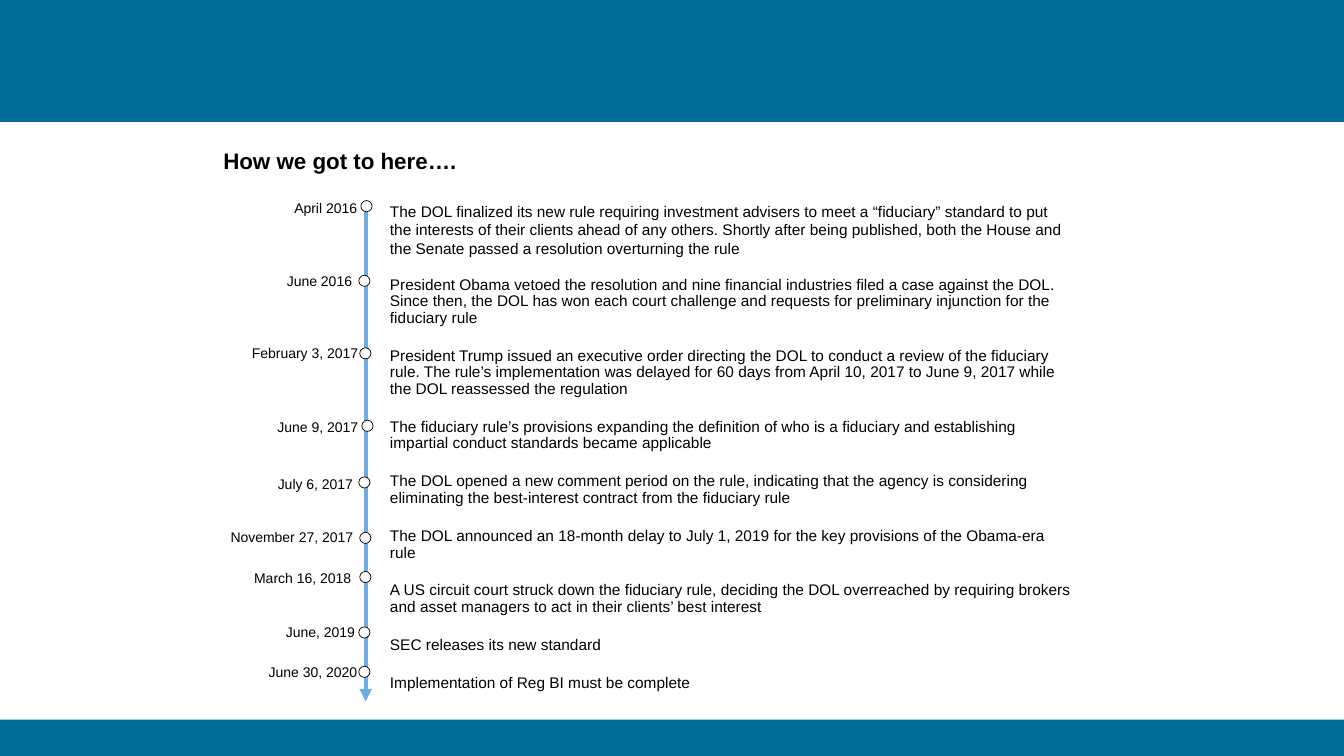
"""Build the fiduciary rule timeline slide."""
from dataclasses import dataclass

from lxml.etree import SubElement
from pptx import Presentation
from pptx.dml.color import RGBColor
from pptx.enum.shapes import MSO_CONNECTOR, MSO_SHAPE
from pptx.enum.text import PP_ALIGN
from pptx.oxml.ns import qn
from pptx.util import Pt

TITLE = "How we got to here…."

# date, label right, label top, dot left, dot top
MILESTONES = [
    ("April 2016", 262.1, 139, 257.8, 143.3),
    ("June 2016", 258.5, 190.8, 256.3, 196.6),
    ("February 3, 2017", 262.8, 242.6, 257, 248.4),
    ("June 9, 2017", 262.8, 295.2, 258.5, 300.2),
    ("July 6, 2017", 259.2, 336.2, 256.3, 340.6),
    ("November 27, 2017", 259.2, 373.7, 257, 380.2),
    ("March 16, 2018", 257.8, 403.2, 257, 408.2),
    ("June, 2019", 260.6, 442.1, 256.3, 447.8),
    ("June 30, 2020", 262.1, 470.2, 256.3, 475.9),
]

EVENTS = [
    "The DOL finalized its new rule requiring investment advisers to meet a “fiduciary” standard "
    "to put the interests of their clients ahead of any others. Shortly after being published, "
    "both the House and the Senate passed a resolution overturning the rule",
    "President Obama vetoed the resolution and nine financial industries filed a case against the "
    "DOL. Since then, the DOL has won each court challenge and requests for preliminary "
    "injunction for the fiduciary rule",
    "President Trump issued an executive order directing the DOL to conduct a review of the "
    "fiduciary rule. The rule’s implementation was delayed for 60 days from April 10, 2017 to "
    "June 9, 2017 while the DOL reassessed the regulation",
    "The fiduciary rule’s provisions expanding the definition of who is a fiduciary and "
    "establishing impartial conduct standards became applicable",
    "The DOL opened a new comment period on the rule, indicating that the agency is considering "
    "eliminating the best-interest contract from the fiduciary rule",
    "The DOL announced an 18-month delay to July 1, 2019 for the key provisions of the "
    "Obama-era rule",
    "A US circuit court struck down the fiduciary rule, deciding the DOL overreached by requiring "
    "brokers and asset managers to act in their clients’ best interest",
    "SEC releases its new standard",
    "Implementation of Reg BI must be complete",
]


@dataclass(frozen=True)
class Theme:
    """Colours, font and type sizes of the slide."""

    band: RGBColor = RGBColor(0x01, 0x6E, 0x99)
    axis: RGBColor = RGBColor(0x70, 0xAC, 0xE2)
    ink: RGBColor = RGBColor(0, 0, 0)
    paper: RGBColor = RGBColor(0xFF, 0xFF, 0xFF)
    font: str = "Arial"
    title_size: float = 16
    event_size: float = 11
    date_size: float = 10


THEME = Theme()
SLIDE_WIDTH, SLIDE_HEIGHT = 960, 540
HEADER_HEIGHT, FOOTER_TOP = 87.1, 514.1
AXIS_X, AXIS_TOP, AXIS_BOTTOM = 261.2, 146.2, 501.1
DOT_SIZE = 8
DATE_WIDTH, DATE_HEIGHT = 112, 19.4
FIRST_GAP, EVENT_GAP = 13.75, 15.2


def add_text(slide, paragraphs, left, top, width, height, size,
             bold=False, align=PP_ALIGN.LEFT, inset=None):
    """Add a text box and return its paragraphs."""
    frame = slide.shapes.add_textbox(Pt(left), Pt(top), Pt(width), Pt(height)).text_frame
    frame.word_wrap = True
    if inset is not None:
        frame.margin_left = frame.margin_right = Pt(inset)
        frame.margin_top = frame.margin_bottom = Pt(inset)
    frame.text = "\n".join(paragraphs)
    for paragraph in frame.paragraphs:
        paragraph.alignment = align
        for run in paragraph.runs:
            run.font.name = THEME.font
            run.font.size = Pt(size)
            run.font.bold = bold
            run.font.color.rgb = THEME.ink
    return frame.paragraphs


def add_figure(slide, kind, left, top, width, height, fill, outline=None):
    """Add a filled preset shape, outlined if a colour is given."""
    shape = slide.shapes.add_shape(kind, Pt(left), Pt(top), Pt(width), Pt(height))
    shape.shadow.inherit = False
    shape.fill.solid()
    shape.fill.fore_color.rgb = fill
    if outline is None:
        shape.line.fill.background()
    else:
        shape.line.color.rgb = outline
        shape.line.width = Pt(0.5)


def add_axis(slide):
    """Add the downward time arrow."""
    connector = slide.shapes.add_connector(
        MSO_CONNECTOR.STRAIGHT, Pt(AXIS_X), Pt(AXIS_TOP), Pt(AXIS_X), Pt(AXIS_BOTTOM))
    connector.line.color.rgb = THEME.axis
    connector.line.width = Pt(3)
    SubElement(connector.line._get_or_add_ln(), qn("a:tailEnd"), type="triangle")
    SubElement(connector._element.spPr, qn("a:effectLst"))


def add_events(slide):
    """Add the event descriptions as one spaced text column."""
    paragraphs = add_text(slide, EVENTS, 278.6, 144.3, 487.4, 371.5,
                          size=THEME.event_size, inset=0)
    paragraphs[0].space_after = Pt(FIRST_GAP)
    for paragraph in paragraphs[1:]:
        paragraph.line_spacing = 0.9
        paragraph.space_after = Pt(EVENT_GAP)


def main():
    """Build and save the slide."""
    presentation = Presentation()
    presentation.slide_width, presentation.slide_height = Pt(SLIDE_WIDTH), Pt(SLIDE_HEIGHT)
    slide = presentation.slides.add_slide(presentation.slide_layouts[6])
    for top, bottom in ((0, HEADER_HEIGHT), (FOOTER_TOP, SLIDE_HEIGHT)):
        add_figure(slide, MSO_SHAPE.RECTANGLE, 0, top, SLIDE_WIDTH, bottom - top, THEME.band)
    add_text(slide, [TITLE], 152.4, 101.5, 469.4, 26.6, size=THEME.title_size, bold=True)
    add_events(slide)
    add_axis(slide)
    for date, label_right, label_top, dot_left, dot_top in MILESTONES:
        add_figure(slide, MSO_SHAPE.OVAL, dot_left, dot_top, DOT_SIZE, DOT_SIZE,
                   THEME.paper, outline=THEME.ink)
        add_text(slide, [date], label_right - DATE_WIDTH, label_top, DATE_WIDTH, DATE_HEIGHT,
                 size=THEME.date_size, align=PP_ALIGN.RIGHT)
    presentation.save("out.pptx")


if __name__ == "__main__":
    main()
